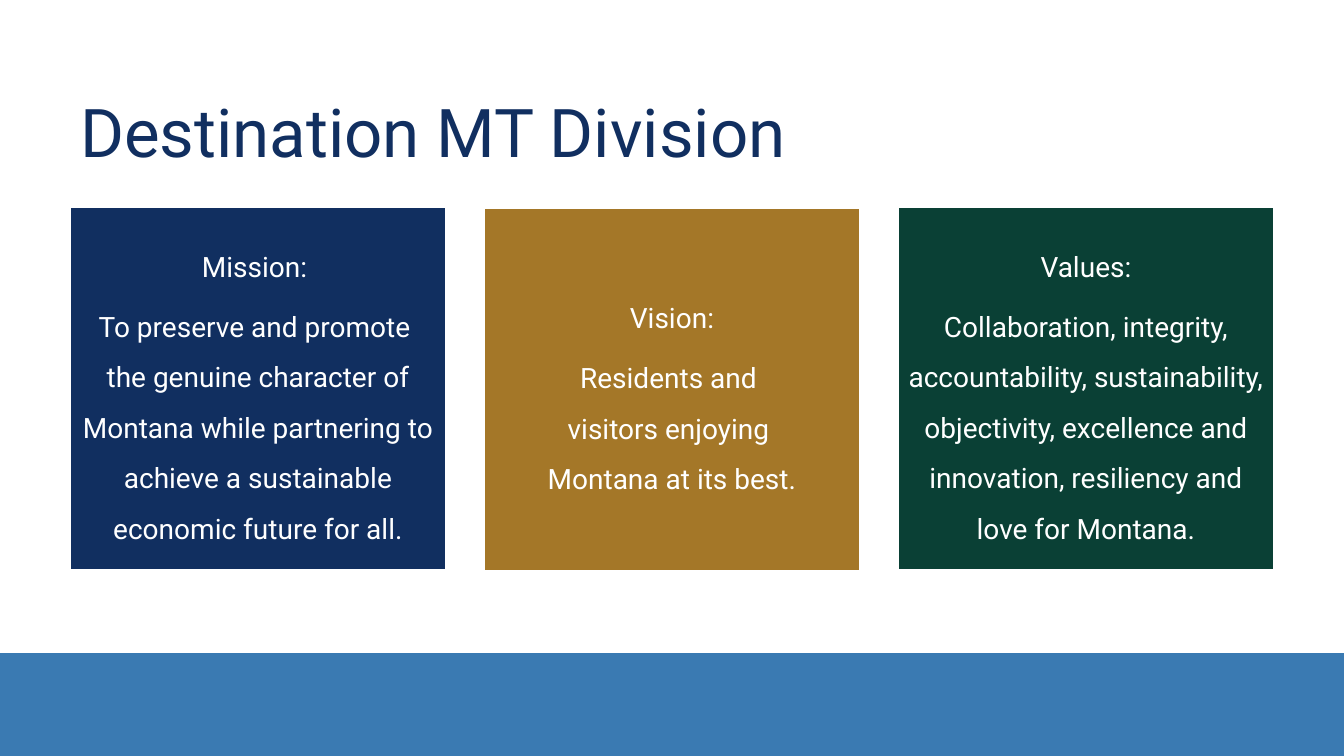
from pptx import Presentation
from pptx.dml.color import RGBColor
from pptx.enum.shapes import MSO_SHAPE
from pptx.enum.text import MSO_ANCHOR, MSO_AUTO_SIZE, PP_ALIGN
from pptx.util import Emu, Pt

RECTANGLE = MSO_SHAPE.RECTANGLE
LEFT, CENTER = PP_ALIGN.LEFT, PP_ALIGN.CENTER
MIDDLE, BOTTOM = MSO_ANCHOR.MIDDLE, MSO_ANCHOR.BOTTOM
NO_AUTOFIT = MSO_AUTO_SIZE.NONE

EMU_PER_PX = 914400 / 100.8
FONT = "Roboto"
COLORS = {
    "navy": "112F60",
    "gold": "A47728",
    "green": "0A4035",
    "blue": "3A7AB2",
    "white": "FFFFFF",
}

# Heading, lines of text, fill colour and top of each card
CARDS = [
    ("Mission: ",
     ["To preserve and promote ",
      "the genuine character of Montana while partnering to "
      "achieve a sustainable economic future for all."],
     "navy", 207),
    ("Vision:",
     ["Residents and ", "visitors enjoying ", "Montana at its best."],
     "gold", 208),
    ("Values:",
     ["Collaboration, integrity, accountability, sustainability, "
      "objectivity, excellence and innovation, resiliency and "
      "love for Montana."],
     "green", 207),
]
CARD_LEFT, CARD_STEP, CARD_WIDTH, CARD_HEIGHT = 70, 414, 376, 363


def px(length):
    return Emu(round(length * EMU_PER_PX))


def color(name):
    return RGBColor.from_string(COLORS[name])


def add_span(para, text, size, color_name):
    span = para.add_run()
    span.text = text
    span.font.name = FONT
    span.font.size = Pt(size)
    span.font.color.rgb = color(color_name)


def add_rectangle(page, box, fill):
    shape = page.shapes.add_shape(RECTANGLE, *map(px, box))
    shape.shadow.inherit = False
    shape.fill.solid()
    shape.fill.fore_color.rgb = color(fill)
    shape.line.fill.background()
    return shape


def fill_title(page, box, text):
    title = page.shapes.title
    title.left, title.top, title.width, title.height = map(px, box)
    frame = title.text_frame
    frame.auto_size = NO_AUTOFIT
    frame.word_wrap = True
    frame.vertical_anchor = BOTTOM
    para = frame.paragraphs[0]
    para.alignment = LEFT
    para.line_spacing = 0.9
    add_span(para, text, 48, "navy")


def add_card(page, box, heading, lines, fill):
    card = add_rectangle(page, box, fill)
    card.line.color.rgb = color("white")
    card.line.width = Pt(1.5)
    frame = card.text_frame
    frame.word_wrap = True
    frame.vertical_anchor = MIDDLE
    frame.margin_left = frame.margin_right = px(8)
    frame.margin_top = frame.margin_bottom = px(8)
    for index, para_lines in enumerate([[heading], lines]):
        para = frame.add_paragraph() if index else frame.paragraphs[0]
        para.alignment = CENTER
        para.line_spacing = 1.5
        para.space_after = Pt(7)
        for number, line in enumerate(para_lines):
            if number:
                para.add_line_break()
            add_span(para, line, 20, "white")


def build_division_slide(deck):
    page = deck.slides.add_slide(deck.slide_layouts[5])
    add_rectangle(page, (0, 653, 1344, 103), "blue")
    fill_title(page, (70, -86, 1008, 263), "Destination MT Division")
    for index, (heading, lines, fill, top) in enumerate(CARDS):
        left = CARD_LEFT + index * CARD_STEP
        add_card(page, (left, top, CARD_WIDTH, CARD_HEIGHT), heading, lines, fill)


def main():
    deck = Presentation()
    deck.slide_width, deck.slide_height = px(1344), px(756)
    build_division_slide(deck)
    deck.save("out.pptx")


if __name__ == "__main__":
    main()
